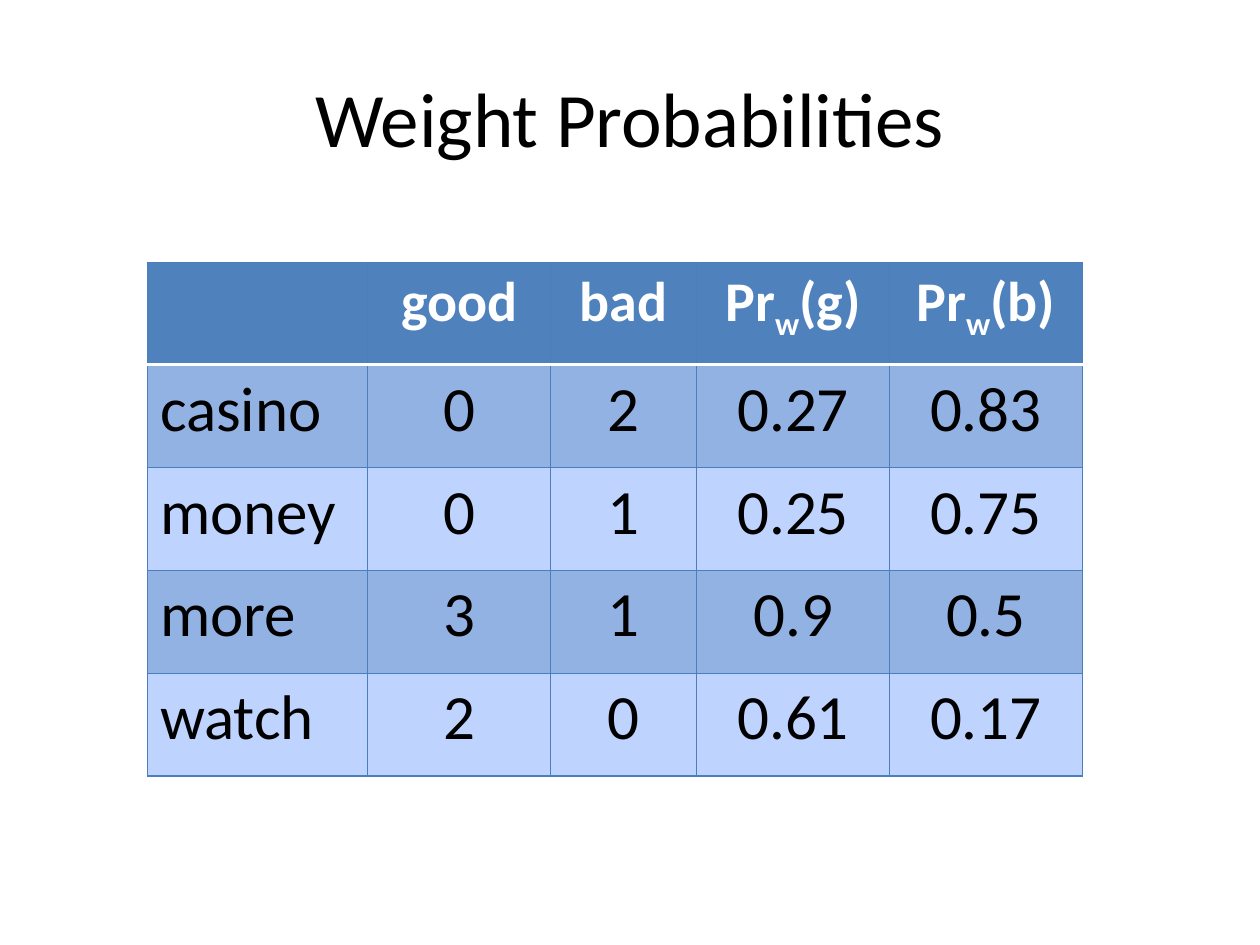
from lxml.etree import SubElement as Sub
from pptx import Presentation
from pptx.dml.color import RGBColor as RGB
from pptx.enum.text import MSO_ANCHOR as Anchor, PP_ALIGN as Align
from pptx.oxml.ns import qn
from pptx.util import Inches, Pt

BLACK = RGB(0x00, 0x00, 0x00)
WHITE = RGB(0xFF, 0xFF, 0xFF)
BLUE = RGB(0x4F, 0x81, 0xBD)
EDGE = RGB(0x4B, 0x7E, 0xBC)
DARK = RGB(0x93, 0xB2, 0xE4)
LIGHT = RGB(0xBF, 0xD3, 0xFF)

ROWS = [
    ["", "good", "bad", "Pr_w_(g)", "Pr_w_(b)"],
    ["casino", "0", "2", "0.27", "0.83"],
    ["money", "0", "1", "0.25", "0.75"],
    ["more", "3", "1", "0.9", "0.5"],
    ["watch", "2", "0", "0.61", "0.17"],
]
WIDTHS = [1.75, 1.45, 1.16, 1.53, 1.53]


def write(frame, text, size=36, color=BLACK, bold=False, align=Align.CENTER):
    """Fill a text frame; a part between underscores is a subscript."""
    para = frame.paragraphs[0]
    para.alignment = align
    for i, part in enumerate(text.split("_")):
        run = para.add_run()
        run.text = part
        font = run.font
        font.name, font.size, font.bold = "Calibri", Pt(size), bold
        font.color.rgb = color
        if i % 2:
            run._r.get_or_add_rPr().set("baseline", "-25000")


def border(cell, side, color=EDGE, width=0.75):
    props = cell._tc.get_or_add_tcPr()
    line = Sub(props, qn(f"a:ln{side}"), w=str(Pt(width)))
    fill = Sub(line, qn("a:solidFill"))
    Sub(fill, qn("a:srgbClr"), val=str(color))


def add_title(slide, text):
    title = slide.shapes.title
    title.left, title.top = Inches(0.5), Inches(0.3)
    title.width, title.height = Inches(9), Inches(1.25)
    title.text_frame.vertical_anchor = Anchor.MIDDLE
    write(title.text_frame, text, size=44)


def add_grid(slide, rows, widths):
    frame = slide.shapes.add_table(
        len(rows), len(widths), Inches(1.17), Inches(2.08),
        Inches(sum(widths)), Inches(4.08))
    table = frame.table
    for col, width in zip(table.columns, widths):
        col.width = Inches(width)
    for r, row in enumerate(rows):
        for c, text in enumerate(row):
            cell = table.cell(r, c)
            # The rule under the header is white and thicker
            for side in "LRTB":
                if (r, side) in [(0, "B"), (1, "T")]:
                    border(cell, side, color=WHITE, width=2)
                else:
                    border(cell, side)
            cell.fill.solid()
            if r == 0:
                cell.fill.fore_color.rgb = BLUE
                if text:
                    write(cell.text_frame, text, size=32, color=WHITE, bold=True)
            else:
                cell.fill.fore_color.rgb = DARK if r % 2 else LIGHT
                align = Align.CENTER if c else Align.LEFT
                write(cell.text_frame, text, align=align)


def main():
    deck = Presentation()
    deck.slide_width, deck.slide_height = Inches(10), Inches(7.5)
    slide = deck.slides.add_slide(deck.slide_layouts[5])
    add_title(slide, "Weight Probabilities")
    add_grid(slide, ROWS, WIDTHS)
    deck.save("out.pptx")


if __name__ == "__main__":
    main()
